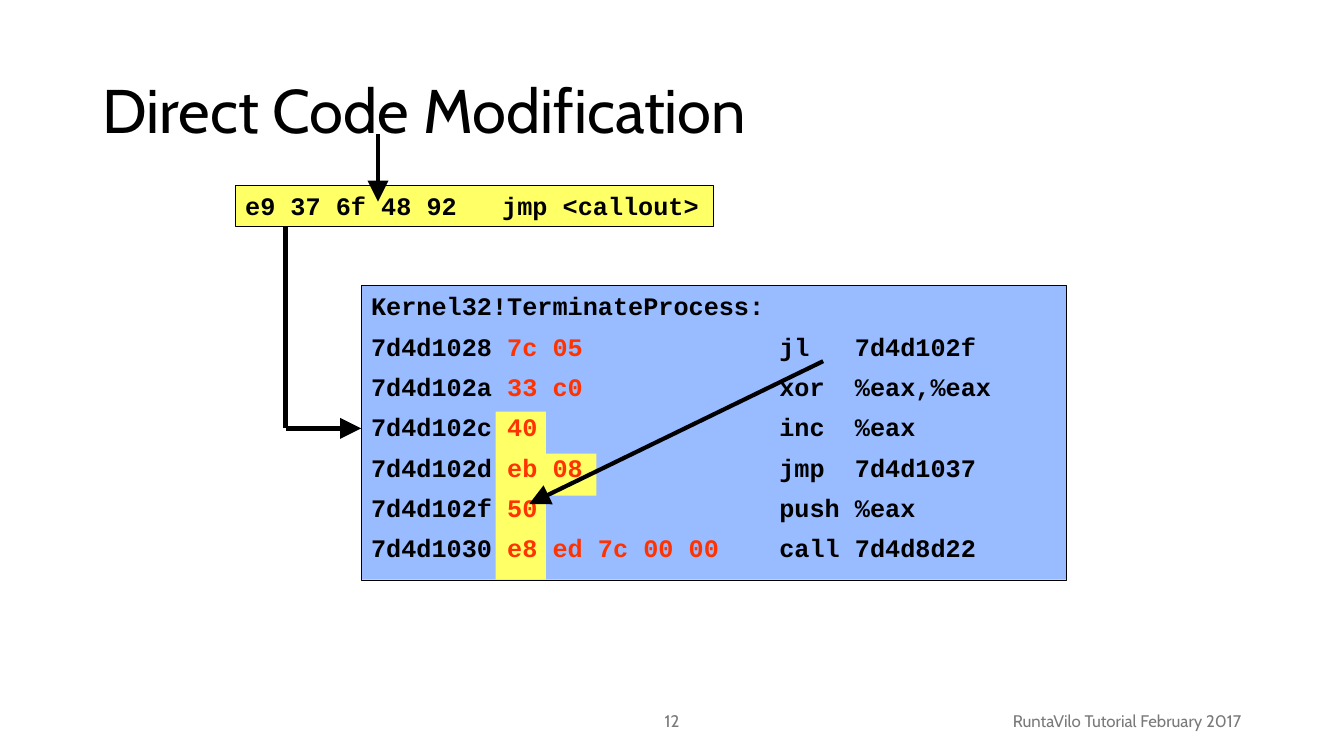
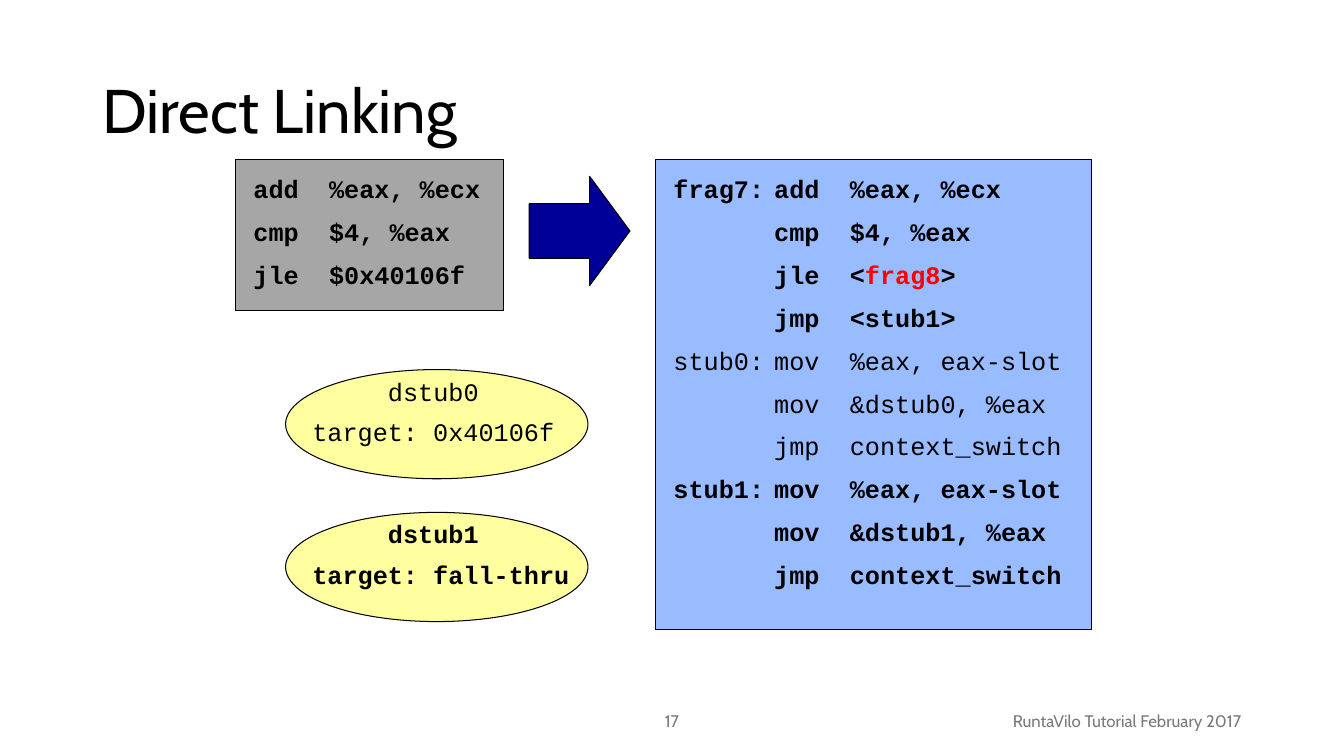
from dataclasses import dataclass
from typing import Any, NamedTuple

from lxml.etree import SubElement
from pptx import Presentation
from pptx.dml.color import RGBColor
from pptx.enum.shapes import MSO_CONNECTOR, MSO_SHAPE
from pptx.enum.text import MSO_ANCHOR, PP_ALIGN
from pptx.oxml.ns import qn
from pptx.util import Pt

BLACK = RGBColor(0x00, 0x00, 0x00)
GRAY_TEXT = RGBColor(0x79, 0x79, 0x79)
GRAY_PANEL = RGBColor(0xA6, 0xA6, 0xA6)
BLUE_PANEL = RGBColor(0x99, 0xBB, 0xFF)
NAVY = RGBColor(0x00, 0x00, 0x99)
YELLOW = RGBColor(0xFF, 0xFF, 0x66)
PALE_YELLOW = RGBColor(0xFF, 0xFF, 0x9F)
ORANGE_RED = RGBColor(0xFF, 0x33, 0x00)
RED = RGBColor(0xFF, 0x00, 0x00)

CHARACTER = 10.8  # width of one Courier New character at 18 pt
FOOTER_TEXT = "RuntaVilo Tutorial February 2017"


class Box(NamedTuple):
    left: float
    top: float
    width: float
    height: float


class Line(NamedTuple):
    text: str  # parts between bars take the accent colour
    bold: bool = True


@dataclass(frozen=True)
class TextStyle:
    font: dict[str, Any]
    paragraph: dict[str, Any]
    frame: dict[str, Any]
    color: RGBColor = BLACK
    accent: RGBColor = RED
    gap: float = 0
    tabs: tuple[float, ...] = ()


@dataclass(frozen=True)
class Arrow:
    start: tuple[float, float]
    end: tuple[float, float]
    head: bool = True


@dataclass(frozen=True)
class Stub:
    name: str
    target: str
    bold: bool


def cabin(size: int, color: RGBColor, **paragraph: Any) -> TextStyle:
    return TextStyle({"name": "Cabin", "size": Pt(size)}, paragraph,
                     {"vertical_anchor": MSO_ANCHOR.MIDDLE}, color)


def code(gap: float = 0, tabs: tuple[float, ...] = (), accent: RGBColor = RED,
         **frame: Any) -> TextStyle:
    return TextStyle({"name": "Courier New", "size": Pt(18)},
                     {"alignment": PP_ALIGN.LEFT},
                     {"vertical_anchor": MSO_ANCHOR.TOP, **frame},
                     accent=accent, gap=gap, tabs=tabs)


# Shared styles
TITLE = cabin(44, BLACK, line_spacing=0.9)
NUMBER = cabin(12, GRAY_TEXT, alignment=PP_ALIGN.CENTER)
FOOTER = cabin(12, GRAY_TEXT, alignment=PP_ALIGN.RIGHT)
PANEL_MARGINS = {"margin_left": Pt(13), "margin_top": Pt(10)}


def set_format(target: Any, values: dict[str, Any]) -> None:
    for name, value in values.items():
        setattr(target, name, value)


def set_tabs(paragraph: Any, positions: tuple[float, ...]) -> None:
    if positions:
        tab_list = SubElement(paragraph._p.get_or_add_pPr(), qn("a:tabLst"))
        for position in positions:
            SubElement(tab_list, qn("a:tab"), pos=str(int(Pt(position))), algn="l")


def write(shape: Any, lines: list[Line], style: TextStyle) -> None:
    frame = shape.text_frame
    set_format(frame, {"word_wrap": True, **style.frame})
    for row, line in enumerate(lines):
        paragraph = frame.add_paragraph() if row else frame.paragraphs[0]
        set_format(paragraph, style.paragraph)
        if row:
            paragraph.space_before = Pt(style.gap)
        set_tabs(paragraph, style.tabs)
        for index, part in enumerate(line.text.split("|")):
            if part:
                run = paragraph.add_run()
                run.text = part
                set_format(run.font, {**style.font, "bold": line.bold})
                run.font.color.rgb = style.accent if index % 2 else style.color


def add_text(slide: Any, box: Box, line: Line, style: TextStyle) -> None:
    write(slide.shapes.add_textbox(*map(Pt, box)), [line], style)


def add_figure(slide: Any, kind: MSO_SHAPE, box: Box, fill: RGBColor | None,
               outlined: bool = True) -> Any:
    shape = slide.shapes.add_shape(kind, *map(Pt, box))
    shape.shadow.inherit = False
    if fill is None:
        shape.fill.background()
    else:
        shape.fill.solid()
        shape.fill.fore_color.rgb = fill
    if outlined:
        shape.line.color.rgb = BLACK
        shape.line.width = Pt(0.75)
    else:
        shape.line.fill.background()
    return shape


def add_arrow(slide: Any, arrow: Arrow) -> None:
    connector = slide.shapes.add_connector(
        MSO_CONNECTOR.STRAIGHT, *map(Pt, arrow.start + arrow.end))
    connector.line.color.rgb = BLACK
    connector.line.width = Pt(3)
    if arrow.head:
        SubElement(connector.line._get_or_add_ln(), qn("a:tailEnd"),
                   type="triangle", w="lg", len="lg")
    SubElement(connector._element.spPr, qn("a:effectLst"))


def add_slide(presentation: Any, title: str, number: int) -> Any:
    slide = presentation.slides.add_slide(presentation.slide_layouts[6])
    add_text(slide, Box(66, 28.8, 828, 104.4), Line(title, False), TITLE)
    add_text(slide, Box(318, 500.4, 324, 28.8), Line(str(number), False), NUMBER)
    add_text(slide, Box(678, 500.4, 216, 28.8), Line(FOOTER_TEXT, False), FOOTER)
    return slide


def build_code_modification(presentation: Any) -> None:
    slide = add_slide(presentation, "Direct Code Modification", 12)

    # Panel with the overwritten bytes highlighted
    panel = Box(258, 204, 504, 210)
    add_figure(slide, MSO_SHAPE.RECTANGLE, panel, BLUE_PANEL, outlined=False)
    for highlight in (Box(354, 294, 36, 120), Box(390, 324, 36, 30)):
        add_figure(slide, MSO_SHAPE.RECTANGLE, highlight, YELLOW, outlined=False)

    # Disassembly: address, bytes, operation, operands
    instructions = [
        ("7d4d1028", "7c 05", "jl", "7d4d102f"),
        ("7d4d102a", "33 c0", "xor", "%eax,%eax"),
        ("7d4d102c", "40", "inc", "%eax"),
        ("7d4d102d", "eb 08", "jmp", "7d4d1037"),
        ("7d4d102f", "50", "push", "%eax"),
        ("7d4d1030", "e8 ed 7c 00 00", "call", "7d4d8d22"),
    ]
    lines = [Line("Kernel32!TerminateProcess:")]
    lines += [Line(f"{address} |{data}|\t{operation}\t{operands}")
              for address, data, operation, operands in instructions]
    listing = add_figure(slide, MSO_SHAPE.RECTANGLE, panel._replace(height=211), None)
    write(listing, lines, code(7.2, (27 * CHARACTER, 32 * CHARACTER), ORANGE_RED))
    add_arrow(slide, Arrow((588, 258), (378, 360)))

    # Injected jump and the control flow through it
    jump = add_figure(slide, MSO_SHAPE.RECTANGLE, Box(168, 132.5, 342, 29.5), YELLOW)
    write(jump, [Line("e9 37 6f 48 92\tjmp <callout>")], code(tabs=(17 * CHARACTER,)))
    for arrow in (Arrow((204, 306), (258, 306)),
                  Arrow((204, 162), (204, 306), head=False),
                  Arrow((270, 96), (270, 144))):
        add_arrow(slide, arrow)


def build_linking(presentation: Any) -> None:
    slide = add_slide(presentation, "Direct Linking", 17)
    operand_tab = 5 * CHARACTER

    # Source block
    source = add_figure(slide, MSO_SHAPE.RECTANGLE, Box(168, 114, 192, 108), GRAY_PANEL)
    write(source,
          [Line("add\t%eax, %ecx"), Line("cmp\t$4, %eax"), Line("jle\t$0x40106f")],
          code(9, (operand_tab,), **PANEL_MARGINS))

    # Translated fragment with its exit stubs
    fragment = add_figure(slide, MSO_SHAPE.RECTANGLE, Box(468, 114, 312, 336), BLUE_PANEL)
    lines = [
        Line("frag7:\tadd\t%eax, %ecx"),
        Line("\tcmp\t$4, %eax"),
        Line("\tjle\t<|frag8|>"),
        Line("\tjmp\t<stub1>"),
    ]
    for index, bold in enumerate((False, True)):
        lines += [
            Line(f"stub{index}:\tmov\t%eax, eax-slot", bold),
            Line(f"\tmov\t&dstub{index}, %eax", bold),
            Line("\tjmp\tcontext_switch", bold),
        ]
    write(fragment, lines, code(9, (72, 72 + operand_tab), **PANEL_MARGINS))

    # Translation arrow
    arrow = add_figure(slide, MSO_SHAPE.RIGHT_ARROW, Box(378, 126, 72, 78), NAVY)
    arrow.adjustments[0] = 0.5
    arrow.adjustments[1] = 0.4

    # Stub descriptors
    stubs = (Stub("dstub0", "0x40106f", False), Stub("dstub1", "fall-thru", True))
    for index, stub in enumerate(stubs):
        top = 264 + 102 * index
        add_figure(slide, MSO_SHAPE.OVAL, Box(204, top, 216, 78), PALE_YELLOW)
        add_text(slide, Box(270, top + 1, 84, 29), Line(stub.name, stub.bold), code())
        add_text(slide, Box(216, top + 30, 210, 29),
                 Line(f"target: {stub.target}", stub.bold), code())


def main() -> None:
    presentation = Presentation()
    presentation.slide_width = Pt(960)
    presentation.slide_height = Pt(540)
    build_code_modification(presentation)
    build_linking(presentation)
    presentation.save("out.pptx")


if __name__ == "__main__":
    main()
